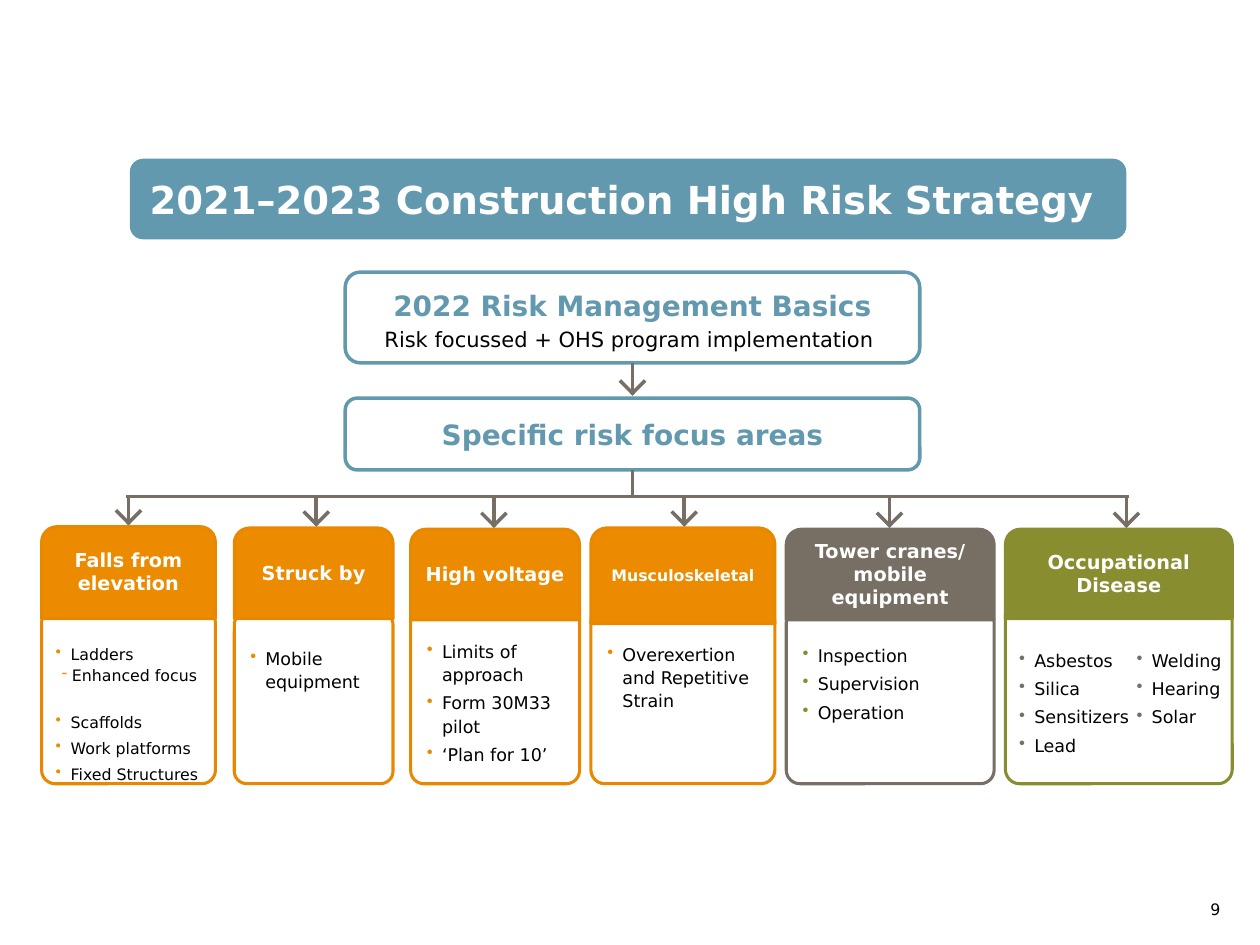
from lxml.etree import SubElement
from pptx import Presentation
from pptx.dml.color import RGBColor
from pptx.enum.shapes import MSO_CONNECTOR, MSO_SHAPE
from pptx.enum.text import MSO_ANCHOR, PP_ALIGN
from pptx.oxml.ns import qn
from pptx.util import Inches, Pt

THEME = {
    "font": "DejaVu Sans",
    "blue": "6399AE", "orange": "ED8B00", "orange_line": "E88800",
    "grey": "776E64", "green": "888D30", "white": "FFFFFF", "black": "000000",
    "title": 22, "heading": 16, "subheading": 12,
    "header": 11, "body": 10, "small": 9,
    "box_line": 2, "column_line": 1.75, "connector_line": 2,
}

TITLE = "2021–2023 Construction High Risk Strategy "
BASICS = ("2022 Risk Management Basics", "Risk focussed + OHS program implementation ")
FOCUS = "Specific risk focus areas"
PAGE_NUMBER = "9"

ORANGE = {"color": "orange", "line": "orange_line", "bullet": "orange"}
COLUMNS = [
    {"header": "Falls from elevation", "left": 0.33, "width": 1.38, "top": 4.18,
     "header_height": 0.73, "body_top": 4.83, "arrow": 1.02, "body_size": "small", "inset": 0.08,
     "items": ["Ladders", {"text": "Enhanced focus", "mark": "-", "indent": 0.13,
                           "hanging": 0.08, "before": 0, "after": 12},
               "Scaffolds", "Work platforms", "Fixed Structures"], **ORANGE},
    {"header": "Struck by", "left": 1.86, "width": 1.26, "top": 4.19,
     "header_height": 0.72, "body_top": 4.86, "arrow": 2.51,
     "items": ["Mobile equipment"], **ORANGE},
    {"header": "High voltage", "left": 3.26, "width": 1.34, "top": 4.2,
     "header_height": 0.72, "body_top": 4.8, "arrow": 3.92,
     "items": ["Limits of approach", "Form 30M33 pilot", "‘Plan for 10’"], **ORANGE},
    {"header": "Musculoskeletal", "left": 4.69, "width": 1.46, "top": 4.19,
     "header_height": 0.76, "body_top": 4.82, "arrow": 5.43, "header_size": "small",
     "items": ["Overexertion and Repetitive Strain"], **ORANGE},
    {"header": "Tower cranes/\nmobile equipment", "left": 6.24, "width": 1.65, "top": 4.2,
     "header_height": 0.72, "body_top": 4.83, "arrow": 7.06,
     "items": ["Inspection", "Supervision", "Operation"],
     "color": "grey", "line": "grey", "bullet": "green"},
    {"header": "Occupational Disease", "left": 7.98, "width": 1.8, "top": 4.2,
     "header_height": 0.71, "body_top": 4.77, "arrow": 8.94,
     "items": [], "color": "green", "line": "green"},
]
DISEASES = ["Asbestos", "Silica", "Sensitizers", "Lead", "Welding", "Hearing", "Solar"]

COLUMN_BOTTOM = 6.22
BUS_Y = 3.94
BUS_ENDS = (1, 8.96)
ARROW_HALF_WIDTH = 0.1
ARROW_HEIGHT = 0.11


def color_of(name):
    """Return the theme colour with this name."""
    return RGBColor.from_string(THEME[name])


def write_text(frame, text, size="body", color="black", bold=False, align=PP_ALIGN.LEFT,
               bullet=None, mark="•", indent=0.12, hanging=0.12, before=0, after=0, spacing=None):
    """Add one formatted paragraph to a text frame."""
    first = frame.paragraphs[0]
    paragraph = frame.add_paragraph() if first.runs else first
    if bullet:
        properties = paragraph._p.get_or_add_pPr()
        properties.set("marL", str(Inches(indent)))
        properties.set("indent", str(-Inches(hanging)))
        SubElement(SubElement(properties, qn("a:buClr")), qn("a:srgbClr"), val=THEME[bullet])
        SubElement(properties, qn("a:buChar"), char=mark)
    paragraph.alignment = align
    if before and paragraph is not first:
        paragraph.space_before = Pt(before)
    if after:
        paragraph.space_after = Pt(after)
    if spacing:
        paragraph.line_spacing = spacing
    for index, line in enumerate(text.split("\n")):
        if index:
            paragraph.add_line_break()
        run = paragraph.add_run()
        run.text = line
        run.font.name = THEME["font"]
        run.font.size = Pt(THEME[size])
        run.font.bold = bold
        run.font.color.rgb = color_of(color)


def write_bullets(frame, items, bullet, size="body"):
    """Write a bulleted list whose items are texts or texts with formats."""
    for item in items:
        details = item if isinstance(item, dict) else {"text": item}
        write_text(frame, **{"size": size, "bullet": bullet, "before": 3, "spacing": 1.1, **details})


def set_frame(frame, insets=(0.1, 0.05, 0.1, 0.05), anchor=MSO_ANCHOR.MIDDLE):
    """Set wrapping, anchor and insets, and return the frame."""
    frame.word_wrap = True
    frame.vertical_anchor = anchor
    (frame.margin_left, frame.margin_top,
     frame.margin_right, frame.margin_bottom) = map(Inches, insets)
    return frame


def add_box(shapes, kind, place, fill="white", line=None, width="box_line", adjustments=()):
    """Add a filled preset shape."""
    shape = shapes.add_shape(kind, *map(Inches, place))
    shape.shadow.inherit = False
    for index, value in enumerate(adjustments):
        shape.adjustments[index] = value
    shape.fill.solid()
    shape.fill.fore_color.rgb = color_of(fill)
    if line:
        shape.line.color.rgb = color_of(line)
        shape.line.width = Pt(THEME[width])
    else:
        shape.line.fill.background()
    return shape


def add_line(shapes, start, end):
    """Add a straight grey connector."""
    connector = shapes.add_connector(MSO_CONNECTOR.STRAIGHT, *map(Inches, start + end))
    connector.line.color.rgb = color_of("grey")
    connector.line.width = Pt(THEME["connector_line"])
    SubElement(connector._element.spPr, qn("a:effectLst"))
    return connector


def add_arrow(slide, x, start, tip):
    """Add a grouped downward arrow and return its stem."""
    shapes = slide.shapes.add_group_shape().shapes
    stem = add_line(shapes, (x, start), (x, tip - 0.02))
    for side in (1, -1):
        add_line(shapes, (x + side * ARROW_HALF_WIDTH, tip - ARROW_HEIGHT), (x - side * 0.01, tip))
    return stem


def add_column(slide, column):
    """Add a risk area with its header, list and arrow."""
    add_arrow(slide, column["arrow"], BUS_Y, column["top"] - 0.02)
    shapes = slide.shapes.add_group_shape().shapes
    left, width, top = column["left"], column["width"], column["body_top"]
    body = add_box(shapes, MSO_SHAPE.ROUNDED_RECTANGLE, (left, top, width, COLUMN_BOTTOM - top),
                   line=column["line"], width="column_line", adjustments=[0.078])
    if column["items"]:
        inset = column.get("inset", 0.1)
        frame = set_frame(body.text_frame, (inset, 0.24, inset, 0.05), MSO_ANCHOR.TOP)
        write_bullets(frame, column["items"], column["bullet"], column.get("body_size", "body"))
    header = add_box(shapes, MSO_SHAPE.ROUND_2_SAME_RECTANGLE,
                     (left, column["top"], width, column["header_height"]), fill=column["color"],
                     line=column["line"], width="column_line", adjustments=[0.168, 0])
    write_text(set_frame(header.text_frame, (0.08, 0.05, 0.08, 0.1)), column["header"],
               size=column.get("header_size", "header"), color="white", bold=True,
               align=PP_ALIGN.CENTER)


def main():
    """Build the strategy slide."""
    presentation = Presentation()
    presentation.slide_width, presentation.slide_height = Inches(10), Inches(7.5)
    slide = presentation.slides.add_slide(presentation.slide_layouts[6])
    shapes = slide.shapes
    heading = {"size": "heading", "color": "blue", "bold": True, "align": PP_ALIGN.CENTER}

    title = add_box(shapes, MSO_SHAPE.ROUNDED_RECTANGLE, (1.03, 1.26, 7.91, 0.64), fill="blue")
    write_text(set_frame(title.text_frame), TITLE, size="title", color="white", bold=True,
               align=PP_ALIGN.CENTER)

    basics = add_box(shapes, MSO_SHAPE.ROUNDED_RECTANGLE, (2.74, 2.16, 4.56, 0.72), line="blue")
    frame = set_frame(basics.text_frame, (0.1, 0.09, 0.1, 0.05))
    write_text(frame, BASICS[0], **heading)
    write_text(frame, BASICS[1], size="subheading", align=PP_ALIGN.CENTER, before=3)

    focus = add_box(shapes, MSO_SHAPE.ROUNDED_RECTANGLE, (2.74, 3.16, 4.56, 0.57), line="blue")
    write_text(set_frame(focus.text_frame), FOCUS, **heading)

    add_arrow(slide, 5.02, 2.88, 3.13).begin_connect(basics, 2)
    add_line(shapes, (5.02, 3.73), (5.02, BUS_Y)).begin_connect(focus, 2)
    add_line(shapes, (BUS_ENDS[0], BUS_Y), (BUS_ENDS[1], BUS_Y))
    for column in COLUMNS:
        add_column(slide, column)

    diseases = shapes.add_textbox(*map(Inches, (7.99, 5.09, 2.02, 0.98)))
    frame = set_frame(diseases.text_frame, anchor=MSO_ANCHOR.TOP)
    frame._txBody.bodyPr.set("numCol", "2")
    frame._txBody.bodyPr.set("spcCol", str(Inches(0.04)))
    write_bullets(frame, DISEASES, "grey")

    number = shapes.add_textbox(*map(Inches, (9.45, 7.07, 0.39, 0.3)))
    write_text(set_frame(number.text_frame), PAGE_NUMBER, size="small", align=PP_ALIGN.CENTER)
    presentation.save("out.pptx")


if __name__ == "__main__":
    main()
